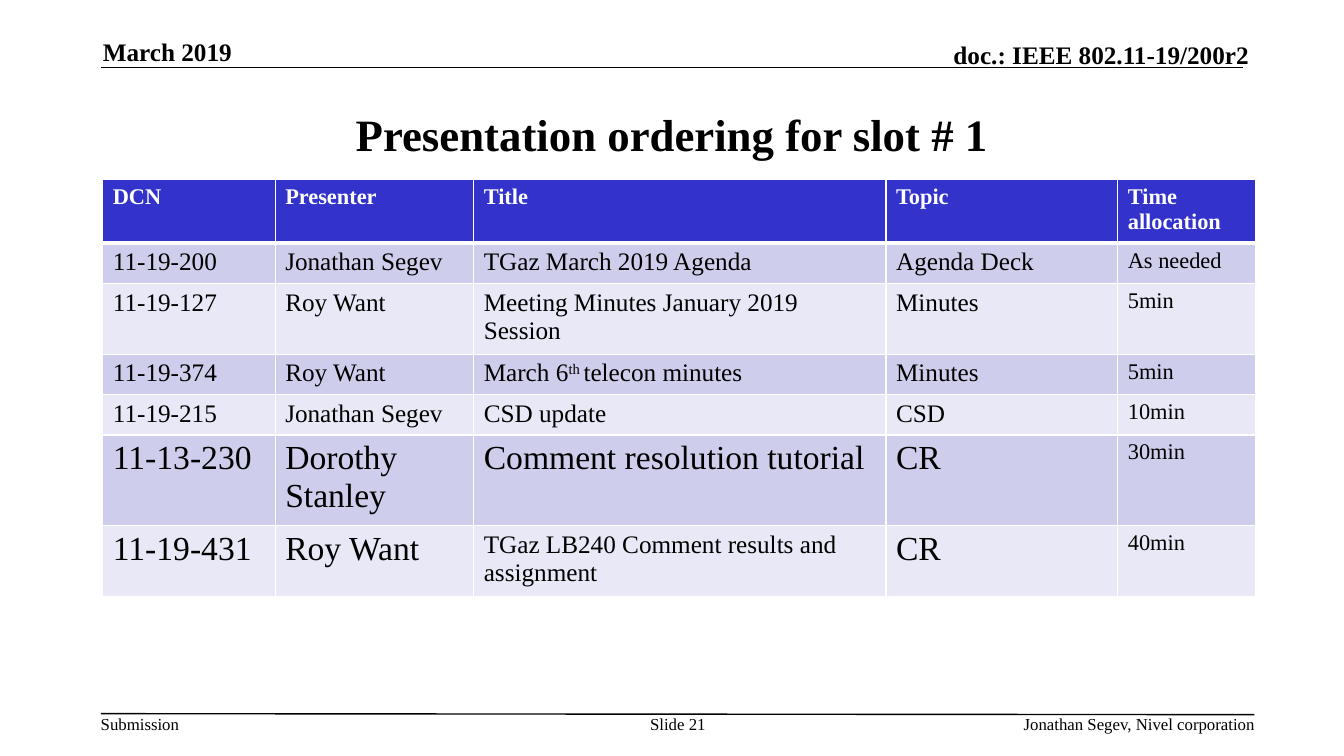
from dataclasses import dataclass

from lxml.etree import SubElement
from pptx import Presentation
from pptx.dml.color import RGBColor
from pptx.enum.shapes import MSO_CONNECTOR
from pptx.enum.text import MSO_ANCHOR, MSO_AUTO_SIZE, PP_ALIGN
from pptx.oxml import parse_xml
from pptx.oxml.ns import nsdecls, qn
from pptx.util import Inches, Pt

COLUMNS, ROWS = 40, 30  # slide grid


@dataclass(frozen=True)
class Theme:
    font: str = "Times New Roman"
    ink: str = "000000"
    paper: str = "FFFFFF"
    header: str = "3333CC"
    bands: tuple = ("CECEEC", "E8E8F6")
    title: int = 32
    large: int = 24
    body: int = 18
    small: int = 16
    footer: int = 12


class SlideBuilder:
    def __init__(self, prs, theme):
        self.prs, self.theme = prs, theme
        self.s = prs.slides.add_slide(prs.slide_layouts[5])

    def x(self, columns):
        return round(self.prs.slide_width * columns / COLUMNS)

    def y(self, rows):
        return round(self.prs.slide_height * rows / ROWS)

    def box(self, left, top, width, height):
        return self.x(left), self.y(top), self.x(width), self.y(height)

    def style(self, p, size, bold=False, color=None, align=PP_ALIGN.LEFT):
        p.alignment = align
        f = p.font
        f.name, f.size, f.bold = self.theme.font, Pt(size), bold
        f.color.rgb = RGBColor.from_string(color or self.theme.ink)

    def title(self, text, *grid):
        sp = self.s.shapes.title
        sp.left, sp.top, sp.width, sp.height = self.box(*grid)
        tf = sp.text_frame
        tf.text = text
        tf.auto_size = MSO_AUTO_SIZE.NONE
        tf.vertical_anchor = MSO_ANCHOR.MIDDLE
        self.style(tf.paragraphs[0], self.theme.title, True, align=PP_ALIGN.CENTER)

    def label(self, text, grid, size, bold=False, align=PP_ALIGN.LEFT,
              anchor=MSO_ANCHOR.TOP, wrap=True):
        tf = self.s.shapes.add_textbox(*self.box(*grid)).text_frame
        tf.margin_left = tf.margin_top = tf.margin_right = tf.margin_bottom = 0
        tf.word_wrap, tf.vertical_anchor = wrap, anchor
        tf.text = text
        self.style(tf.paragraphs[0], size, bold, align=align)

    def rule(self, x1, y1, x2, y2):
        line = self.s.shapes.add_connector(
            MSO_CONNECTOR.STRAIGHT, self.x(x1), self.y(y1), self.x(x2), self.y(y2))
        line.line.width = Pt(1)
        line.line.color.rgb = RGBColor.from_string(self.theme.ink)
        SubElement(line._element.spPr, qn("a:effectLst"))

    def borders(self, cell, top, bottom):
        tcPr = cell._tc.get_or_add_tcPr()
        widths = {"lnL": 1, "lnR": 1, "lnT": top, "lnB": bottom}
        for i, (side, width) in enumerate(widths.items()):
            tcPr.insert(i, parse_xml(
                f'<a:{side} {nsdecls("a")} w="{Pt(width)}"><a:solidFill>'
                f'<a:srgbClr val="{self.theme.paper}"/></a:solidFill></a:{side}>'))

    def cell(self, cell, content, size, fill, bold=False, color=None):
        """Fill one cell; content is a string or a list of (text, raised) runs."""
        cell.fill.solid()
        cell.fill.fore_color.rgb = RGBColor.from_string(fill)
        p = cell.text_frame.paragraphs[0]
        runs = [(content, False)] if isinstance(content, str) else content
        for text, raised in runs:
            r = p.add_run()
            r.text = text
            if raised:
                r.font._element.set("baseline", "30000")
        self.style(p, size, bold, color)

    def table(self, left, top, widths, heights, header, rows):
        """Add a banded table; rows are (cells, sizes) pairs."""
        t = self.theme
        frame = self.s.shapes.add_table(
            len(heights), len(widths), *self.box(left, top, sum(widths), sum(heights)))
        tbl = frame.table
        tbl.horz_banding = False
        for column, width in zip(tbl.columns, widths):
            column.width = self.x(width)
        for row, height in zip(tbl.rows, heights):
            row.height = self.y(height)
        for c, text in enumerate(header):
            self.cell(tbl.cell(0, c), text, t.small, t.header, True, t.paper)
            self.borders(tbl.cell(0, c), 1, 3)
        for r, (contents, sizes) in enumerate(rows, 1):
            for c, (content, size) in enumerate(zip(contents, sizes)):
                self.cell(tbl.cell(r, c), content, size, t.bands[(r - 1) % 2])
                self.borders(tbl.cell(r, c), 3 if r == 1 else 1, 1)


def main():
    prs = Presentation()
    prs.slide_width, prs.slide_height = Inches(13.33), Inches(7.5)
    t = Theme()
    b = SlideBuilder(prs, t)

    b.rule(3, 2.68, 37, 2.68)
    b.rule(3, 28.32, 37.33, 28.36)
    b.label("March 2019", (3.06, 1.44, 8.19, 1.2), t.body, True,
            anchor=MSO_ANCHOR.BOTTOM)
    b.label("doc.: IEEE 802.11-19/200r2", (21.87, 1.56, 15.3, 1.2), t.body, True,
            PP_ALIGN.RIGHT, MSO_ANCHOR.BOTTOM)
    b.label("Submission", (3, 28.32, 2.37, 0.8), t.footer, wrap=False)
    b.label("Slide 21", (19.02, 28.32, 2.31, 1.6), t.footer, align=PP_ALIGN.CENTER)
    b.label("Jonathan Segev, Nivel corporation", (23.43, 28.32, 13.92, 0.8),
            t.footer, align=PP_ALIGN.RIGHT)
    b.title("Presentation ordering for slot # 1", 3, 3, 34, 4.64)

    normal = [t.body] * 4 + [t.small]
    large = [t.large] * 4 + [t.small]
    mixed = [t.large, t.large, t.body, t.large, t.small]
    telecon = [("March 6", False), ("th ", True), ("telecon minutes", False)]
    b.table(
        3.06, 7.12,
        widths=[5.13, 5.91, 12.27, 6.9, 4.11],
        heights=[2.34, 1.5, 2.64, 1.5, 1.5, 3.34, 2.64],
        header=["DCN", "Presenter", "Title", "Topic", "Time allocation"],
        rows=[
            (["11-19-200", "Jonathan Segev", "TGaz March 2019 Agenda",
              "Agenda Deck", "As needed"], normal),
            (["11-19-127", "Roy Want", "Meeting Minutes January 2019 Session",
              "Minutes", "5min"], normal),
            (["11-19-374", "Roy Want", telecon, "Minutes", "5min"], normal),
            (["11-19-215", "Jonathan Segev", "CSD update", "CSD", "10min"], normal),
            (["11-13-230", "Dorothy Stanley", "Comment resolution tutorial",
              "CR", "30min"], large),
            (["11-19-431", "Roy Want", "TGaz LB240 Comment results and assignment",
              "CR", "40min"], mixed),
        ])
    prs.save("out.pptx")


if __name__ == "__main__":
    main()
